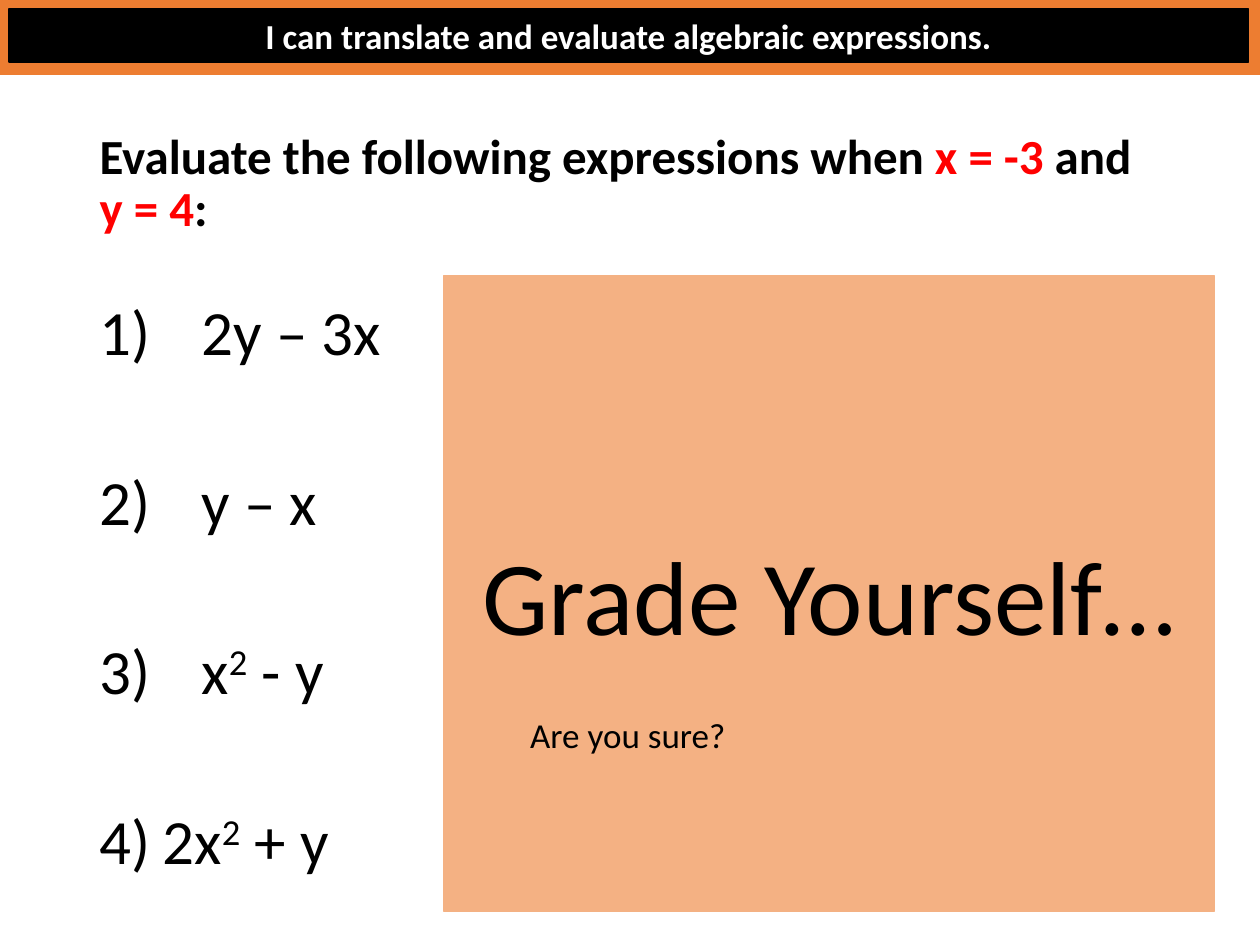
from lxml import etree
from pptx import Presentation
from pptx.dml.color import RGBColor
from pptx.enum.shapes import MSO_SHAPE
from pptx.enum.text import MSO_ANCHOR, MSO_AUTO_SIZE, PP_ALIGN
from pptx.oxml.ns import qn
from pptx.util import Inches, Pt

RECTANGLE = MSO_SHAPE.RECTANGLE
LEFT, CENTER = PP_ALIGN.LEFT, PP_ALIGN.CENTER
TOP, MIDDLE = MSO_ANCHOR.TOP, MSO_ANCHOR.MIDDLE
NO_FIT, GROW = MSO_AUTO_SIZE.NONE, MSO_AUTO_SIZE.SHAPE_TO_FIT_TEXT

BLACK, WHITE, RED = "000000", "FFFFFF", "FF0000"
ORANGE, PEACH = "ED7D31", "F4B183"


def rgb(value):
    return RGBColor.from_string(value)


def place(shape, left, top, width, height):
    shape.left, shape.top = Inches(left), Inches(top)
    shape.width, shape.height = Inches(width), Inches(height)


class LessonSlide:
    font_name = "Calibri"
    line_spacing = 0.9
    number_indent = Inches(0.81)

    def __init__(self, deck):
        self.slide = deck.slides.add_slide(deck.slide_layouts[1])

    def run(self, paragraph, text, size, color=BLACK, bold=False, raised=False):
        run = paragraph.add_run()
        run.text = text
        run.font.name = self.font_name
        run.font.size = Pt(size)
        run.font.bold = bold
        run.font.color.rgb = rgb(color)
        if raised:
            run.font._element.set("baseline", "30000")

    def title(self, box, parts, size):
        heading = self.slide.shapes.title
        place(heading, *box)
        frame = heading.text_frame
        frame.auto_size = NO_FIT
        frame.vertical_anchor = MIDDLE
        paragraph = frame.paragraphs[0]
        paragraph.alignment = LEFT
        paragraph.line_spacing = self.line_spacing
        for text, color in parts:
            self.run(paragraph, text, size, color, bold=True)

    def number(self, paragraph, start):
        """Number the paragraph as 1), 2)...; without a start, show no bullet."""
        properties = paragraph._p.get_or_add_pPr()
        indent = self.number_indent if start else 0
        properties.set("marL", str(indent))
        properties.set("indent", str(-indent))
        if start:
            etree.SubElement(properties, qn("a:buFont"), typeface="+mj-lt")
            etree.SubElement(properties, qn("a:buAutoNum"),
                             type="arabicParenR", startAt=str(start))
        else:
            etree.SubElement(properties, qn("a:buNone"))

    def exercises(self, box, items, size, gap):
        body = self.slide.placeholders[1]
        place(body, *box)
        frame = body.text_frame
        frame.auto_size = NO_FIT
        frame.vertical_anchor = TOP
        for position, (start, parts) in enumerate(items):
            paragraph = frame.add_paragraph() if position else frame.paragraphs[0]
            paragraph.line_spacing = self.line_spacing
            paragraph.space_before = Pt(gap if position else 10)
            self.number(paragraph, start)
            for text, raised in parts:
                self.run(paragraph, text, size, raised=raised)

    def panel(self, box, fill, text="", size=20, color=BLACK, bold=False):
        panel = self.slide.shapes.add_shape(RECTANGLE, *map(Inches, box))
        panel.shadow.inherit = False
        panel.fill.solid()
        panel.fill.fore_color.rgb = rgb(fill)
        panel.line.color.rgb = rgb(fill)
        panel.line.width = Pt(1)
        if text:
            frame = panel.text_frame
            frame.vertical_anchor = MIDDLE
            frame.paragraphs[0].alignment = CENTER
            self.run(frame.paragraphs[0], text, size, color, bold)

    def note(self, box, text, size):
        frame = self.slide.shapes.add_textbox(*map(Inches, box)).text_frame
        frame.word_wrap = False
        frame.auto_size = GROW
        self.run(frame.paragraphs[0], text, size)


def main():
    deck = Presentation()
    deck.slide_width, deck.slide_height = Inches(10), Inches(7.5)
    lesson = LessonSlide(deck)

    lesson.title((0.69, 0.74, 8.62, 1.45), [
        ("Evaluate the following expressions when ", BLACK),
        ("x = -3 ", RED),
        ("and ", BLACK),
        ("y = 4", RED),
        (":", BLACK),
    ], size=28)

    expressions = [
        (1, [("2y – 3x", False)]),
        (2, [("y – x", False)]),
        (3, [("x", False), ("2", True), (" - y", False)]),
        (None, [("4)\t2x", False), ("2", True), (" + y", False)]),
    ]
    lesson.exercises((0.69, 2.34, 8.62, 4.76), expressions, size=36, gap=58)

    lesson.panel((0, 0, 10, 0.59), ORANGE)
    lesson.panel((0.07, 0.07, 9.84, 0.42), BLACK,
                 "I can translate and evaluate algebraic expressions.",
                 color=WHITE, bold=True)
    lesson.panel((3.52, 2.19, 6.12, 5.04), PEACH, "Grade Yourself…", size=60)
    lesson.note((4.11, 5.61, 1.77, 0.44), "Are you sure?", size=20)

    deck.save("out.pptx")


if __name__ == "__main__":
    main()
